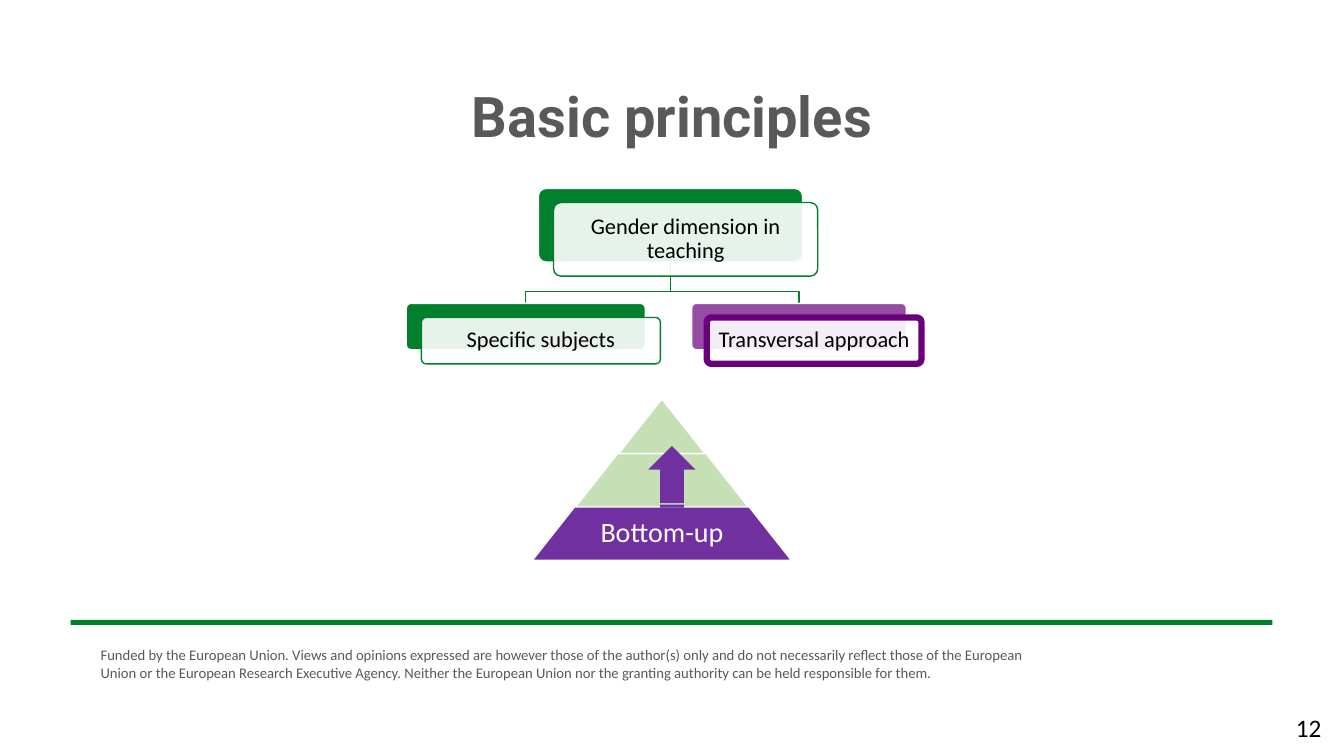
from lxml import etree
from pptx import Presentation
from pptx.dml.color import RGBColor
from pptx.enum.shapes import MSO_SHAPE
from pptx.enum.text import MSO_ANCHOR, PP_ALIGN
from pptx.oxml.ns import qn
from pptx.util import Inches, Pt

GREEN = RGBColor(0x00, 0x7F, 0x2D)
PLUM = RGBColor(0x6A, 0x00, 0x7C)
PURPLE = RGBColor(0x70, 0x30, 0xA0)
LIGHT_GREEN = RGBColor(0xC5, 0xE0, 0xB4)
GREY = RGBColor(0x59, 0x59, 0x59)
BLACK = RGBColor(0x00, 0x00, 0x00)
WHITE = RGBColor(0xFF, 0xFF, 0xFF)

RECTANGLE = MSO_SHAPE.RECTANGLE
ROUNDED = MSO_SHAPE.ROUNDED_RECTANGLE
TRAPEZOID = MSO_SHAPE.TRAPEZOID
STRIPED_ARROW = MSO_SHAPE.STRIPED_RIGHT_ARROW
LEFT, CENTER = PP_ALIGN.LEFT, PP_ALIGN.CENTER
TOP, MIDDLE = MSO_ANCHOR.TOP, MSO_ANCHOR.MIDDLE

FUNDING_NOTE = (
    "Funded by the European Union. Views and opinions expressed are however those of "
    "the author(s) only and do not necessarily reflect those of the European Union or "
    "the European Research Executive Agency. Neither the European Union nor the granting "
    "authority can be held responsible for them."
)


def write_text(shape, text, size, color, font="Calibri", bold=False, align=CENTER,
               anchor=TOP, margin=None, line_spacing=None):
    frame = shape.text_frame
    frame.word_wrap = True
    frame.vertical_anchor = anchor
    if margin is not None:
        frame.margin_left = frame.margin_right = Inches(margin)
        frame.margin_top = frame.margin_bottom = Inches(margin)
    paragraph = frame.paragraphs[0]
    paragraph.text = text
    paragraph.alignment = align
    if line_spacing:
        paragraph.line_spacing = line_spacing
    paragraph.font.name = font
    paragraph.font.size = Pt(size)
    paragraph.font.bold = bold
    paragraph.font.color.rgb = color


def add_text(slide, box, text, size, color, **text_format):
    textbox = slide.shapes.add_textbox(*map(Inches, box))
    write_text(textbox, text, size, color, **text_format)


def add_filled(slide, kind, box, fill, line=None, line_width=1, opacity=100, adjustment=None):
    shape = slide.shapes.add_shape(kind, *map(Inches, box))
    shape.shadow.inherit = False
    shape.fill.solid()
    shape.fill.fore_color.rgb = fill
    if opacity < 100:
        color = shape.fill._xPr.find(qn("a:solidFill")).find(qn("a:srgbClr"))
        etree.SubElement(color, qn("a:alpha")).set("val", str(opacity * 1000))
    if line is None:
        shape.line.fill.background()
    else:
        shape.line.color.rgb = line
        shape.line.width = Pt(line_width)
    if adjustment is not None:
        shape.adjustments[0] = adjustment
    return shape


def add_branch(slide, start, end):
    """Draw a stepped line from a parent card down to a child card."""
    (start_x, start_y), (end_x, end_y) = start, end
    bend_y = end_y - 0.12
    builder = slide.shapes.build_freeform(Inches(start_x), Inches(start_y), scale=1.0)
    corners = [(start_x, bend_y), (end_x, bend_y), (end_x, end_y)]
    builder.add_line_segments([(Inches(x), Inches(y)) for x, y in corners], close=False)
    branch = builder.convert_to_shape()
    branch.shadow.inherit = False
    branch.fill.background()
    branch.line.color.rgb = GREEN
    branch.line.width = Pt(1)


def add_card(slide, box, text, color, back_opacity=100, border=1):
    """Draw a coloured back plate and, offset from it, a translucent labelled plate."""
    left, top, width, height = box
    add_filled(slide, ROUNDED, box, color, WHITE, opacity=back_opacity, adjustment=0.1)
    front = add_filled(slide, ROUNDED, (left + 0.15, top + 0.14, width, height), WHITE,
                       color, border, opacity=90, adjustment=0.1)
    write_text(front, text, 16, BLACK, anchor=MIDDLE, margin=0.07, line_spacing=0.9)


def add_hierarchy(slide, left, top):
    parent = (left + 1.31, top, 2.62, 0.73)
    child_top = top + 1.14
    subjects = (left, child_top, 2.37, 0.46)
    transversal = (left + 2.83, child_top, 2.13, 0.46)
    for child in (transversal, subjects):
        add_branch(slide, (parent[0] + parent[2] / 2, top + parent[3]),
                   (child[0] + child[2] / 2, child_top))
    add_card(slide, parent, "Gender dimension in teaching", GREEN)
    add_card(slide, subjects, "Specific subjects", GREEN)
    add_card(slide, transversal, "Transversal approach", PLUM, back_opacity=70, border=4.5)


def add_pyramid(slide, left, top, width, height):
    tier_colors = [LIGHT_GREEN, LIGHT_GREEN, PURPLE]
    count = len(tier_colors)
    tier_height = height / count
    center = left + width / 2
    for level, color in enumerate(tier_colors):
        tier_width = width * (level + 1) / count
        tier = (center - tier_width / 2, top + level * tier_height, tier_width, tier_height)
        add_filled(slide, TRAPEZOID, tier, color, WHITE, adjustment=0.79)
    label_width = width * 0.65
    add_text(slide, (center - label_width / 2, top + height - tier_height, label_width, tier_height),
             "Bottom-up", 20, WHITE, anchor=MIDDLE, margin=0.03, line_spacing=0.9)
    arrow = add_filled(slide, STRIPED_ARROW, (center - 0.22, top + 0.54, 0.64, 0.47), PURPLE)
    arrow.rotation = 270


def add_footer(slide, left, top, width):
    add_filled(slide, RECTANGLE, (left, top, width, 0.05), GREEN)
    add_text(slide, (left + 0.2, top + 0.21, 9.66, 0.43), FUNDING_NOTE, 10.5, GREY, align=LEFT)
    add_text(slide, (left + width + 0.09, top + 0.87, 0.54, 0.4), "12", 18, BLACK)


def main():
    presentation = Presentation()
    presentation.slide_width = Inches(13.33)
    presentation.slide_height = Inches(7.5)
    slide = presentation.slides.add_slide(presentation.slide_layouts[6])
    add_footer(slide, 0.7, 6.15, 11.92)
    add_text(slide, (3.71, 0.76, 5.91, 0.77), "Basic principles", 40, GREY,
             font="Roboto", bold=True)
    add_hierarchy(slide, 4.03, 1.87)
    add_pyramid(slide, 5.28, 3.97, 2.57, 1.59)
    presentation.save("out.pptx")


if __name__ == "__main__":
    main()
